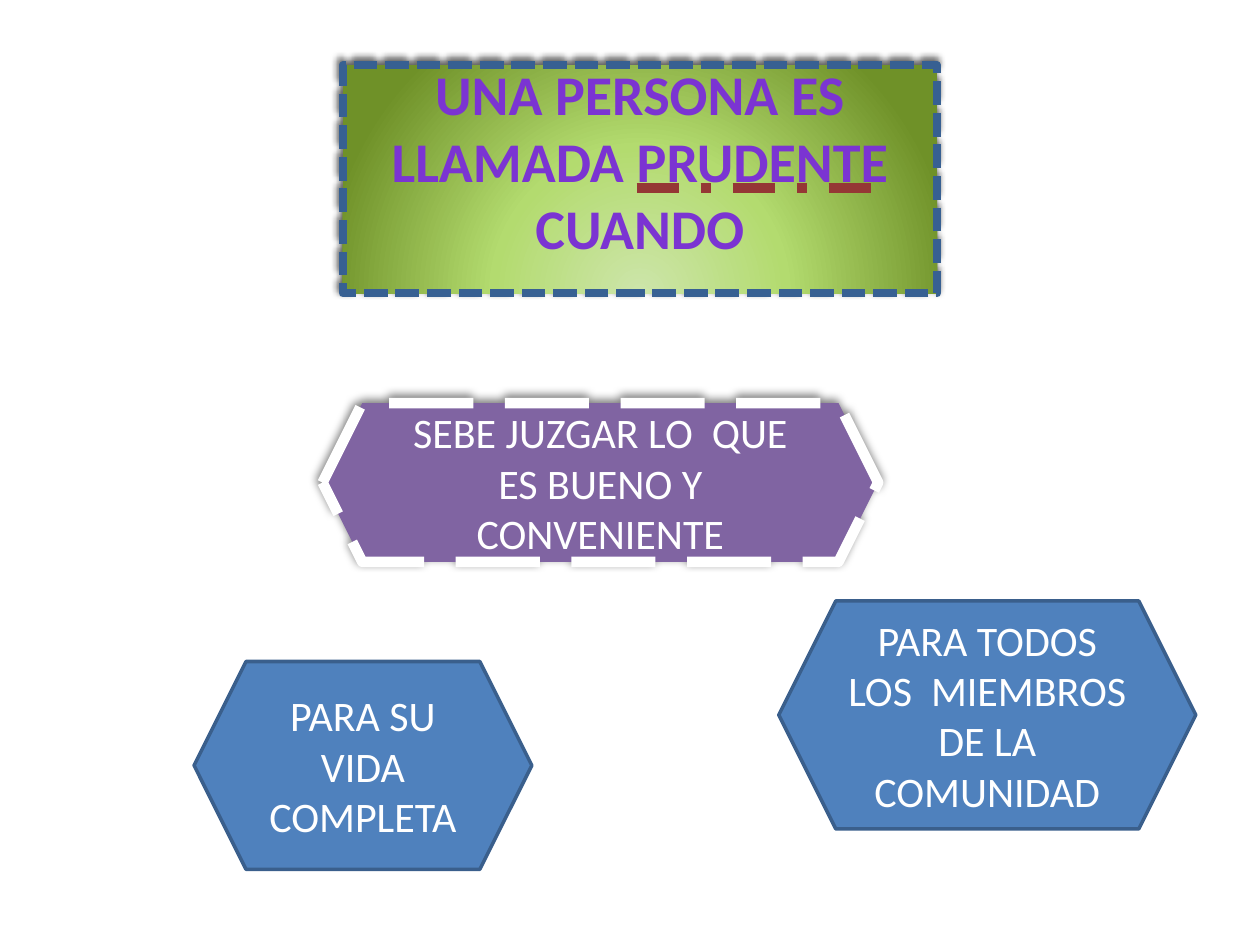
from lxml.etree import SubElement
from pptx import Presentation
from pptx.dml.color import RGBColor
from pptx.enum.dml import MSO_LINE
from pptx.enum.shapes import MSO_SHAPE
from pptx.enum.text import MSO_ANCHOR, MSO_AUTO_SIZE, MSO_UNDERLINE, PP_ALIGN
from pptx.oxml import parse_xml
from pptx.oxml.ns import nsdecls, qn
from pptx.util import Pt

WHITE = RGBColor(0xFF, 0xFF, 0xFF)
BLACK = RGBColor(0x00, 0x00, 0x00)
BLUE = RGBColor(0x4F, 0x81, 0xBD)
BLUE_EDGE = RGBColor(0x3A, 0x5F, 0x8C)
PURPLE = RGBColor(0x80, 0x64, 0xA2)
TITLE_EDGE = RGBColor(0x37, 0x60, 0x92)
TITLE_TEXT = RGBColor(0x7B, 0x34, 0xD2)
UNDERLINE_RED = RGBColor(0x95, 0x37, 0x35)
GREENS = [
    (0, RGBColor(0xCD, 0xE5, 0xAA)),
    (46, RGBColor(0xB3, 0xDB, 0x6F)),
    (100, RGBColor(0x6F, 0x91, 0x28)),
]
FONT = "Calibri"

# Content: title spans as (text, underlined); boxes in points
TITLE_SPANS = [("UNA PERSONA ES LLAMADA ", False), ("PRUDENTE", True), (" CUANDO", False)]
TITLE_AREA = (195.8, 37.4, 339.8, 130.3)

HEXAGONS = [
    dict(text="SEBE JUZGAR LO  QUE ES BUENO Y CONVENIENTE",
         area=(184.3, 230.4, 317.5, 90.7), fill=PURPLE, edge=WHITE,
         width=6, dash=MSO_LINE.LONG_DASH,
         shadow=dict(alpha=50, blur=5, distance=2)),
    dict(text="PARA SU VIDA COMPLETA",
         area=(110.9, 378, 193, 118.8), fill=BLUE, edge=BLUE_EDGE, width=2),
    dict(text="PARA TODOS LOS  MIEMBROS DE LA COMUNIDAD",
         area=(445, 343.4, 238.3, 130.3), fill=BLUE, edge=BLUE_EDGE, width=2),
]


def place(shape, area):
    shape.left, shape.top, shape.width, shape.height = (Pt(length) for length in area)


def set_edge(shape, color, width, dash=None):
    shape.line.color.rgb = color
    shape.line.width = Pt(width)
    if dash is not None:
        shape.line.dash_style = dash


def set_shadow(shape, alpha, blur, distance, angle=245):
    effects = shape._element.spPr.find(qn("a:effectLst"))
    shadow = SubElement(effects, qn("a:outerShdw"), blurRad=str(Pt(blur)),
                        dist=str(Pt(distance)), dir=str(angle * 60000),
                        algn="ctr", rotWithShape="0")
    color = SubElement(shadow, qn("a:srgbClr"), val=str(BLACK))
    SubElement(color, qn("a:alpha"), val=str(alpha * 1000))


def set_radial_fill(shape, stops):
    shape.fill.gradient()
    gradient = shape._element.spPr.find(qn("a:gradFill"))
    for child in list(gradient):
        gradient.remove(child)
    stop_list = SubElement(gradient, qn("a:gsLst"))
    for position, color in stops:
        stop = SubElement(stop_list, qn("a:gs"), pos=str(position * 1000))
        SubElement(stop, qn("a:srgbClr"), val=str(color))
    circle = SubElement(gradient, qn("a:path"), path="circle")
    SubElement(circle, qn("a:fillToRect"), l="50000", t="155000", r="50000", b="-55000")


def prepare_text(shape):
    frame = shape.text_frame
    frame.word_wrap = True
    frame.auto_size = MSO_AUTO_SIZE.NONE
    frame.vertical_anchor = MSO_ANCHOR.MIDDLE
    para = frame.paragraphs[0]
    para.alignment = PP_ALIGN.CENTER
    return para


def add_span(para, text, size=24, color=WHITE, bold=False, underline=None):
    span = para.add_run()
    span.text = text
    span.font.size = Pt(size)
    span.font.bold = bold
    span.font.color.rgb = color
    if underline is not None:
        span.font.underline = MSO_UNDERLINE.DOT_DASH_HEAVY_LINE
        span.font._element.append(parse_xml(
            f'<a:uFill {nsdecls("a")}><a:solidFill><a:srgbClr val="{underline}"/>'
            "</a:solidFill></a:uFill>"))
    span.font.name = FONT


deck = Presentation()
deck.slide_width, deck.slide_height = Pt(720), Pt(540)
page = deck.slides.add_slide(deck.slide_layouts[5])

# Title box
title = page.shapes.title
place(title, TITLE_AREA)
set_radial_fill(title, GREENS)
set_edge(title, TITLE_EDGE, 4.5, MSO_LINE.SQUARE_DOT)
title.shadow.inherit = False
set_shadow(title, alpha=60, blur=4, distance=3)
title_para = prepare_text(title)
title.text_frame.margin_top, title.text_frame.margin_bottom = Pt(0), Pt(22)
for text, underlined in TITLE_SPANS:
    add_span(title_para, text, size=32, color=TITLE_TEXT, bold=True,
             underline=UNDERLINE_RED if underlined else None)

# Hexagons
for item in HEXAGONS:
    box = page.shapes.add_shape(MSO_SHAPE.HEXAGON, *(Pt(length) for length in item["area"]))
    box.fill.solid()
    box.fill.fore_color.rgb = item["fill"]
    set_edge(box, item["edge"], item["width"], item.get("dash"))
    box.shadow.inherit = False
    if "shadow" in item:
        set_shadow(box, **item["shadow"])
    add_span(prepare_text(box), item["text"])

deck.save("out.pptx")
